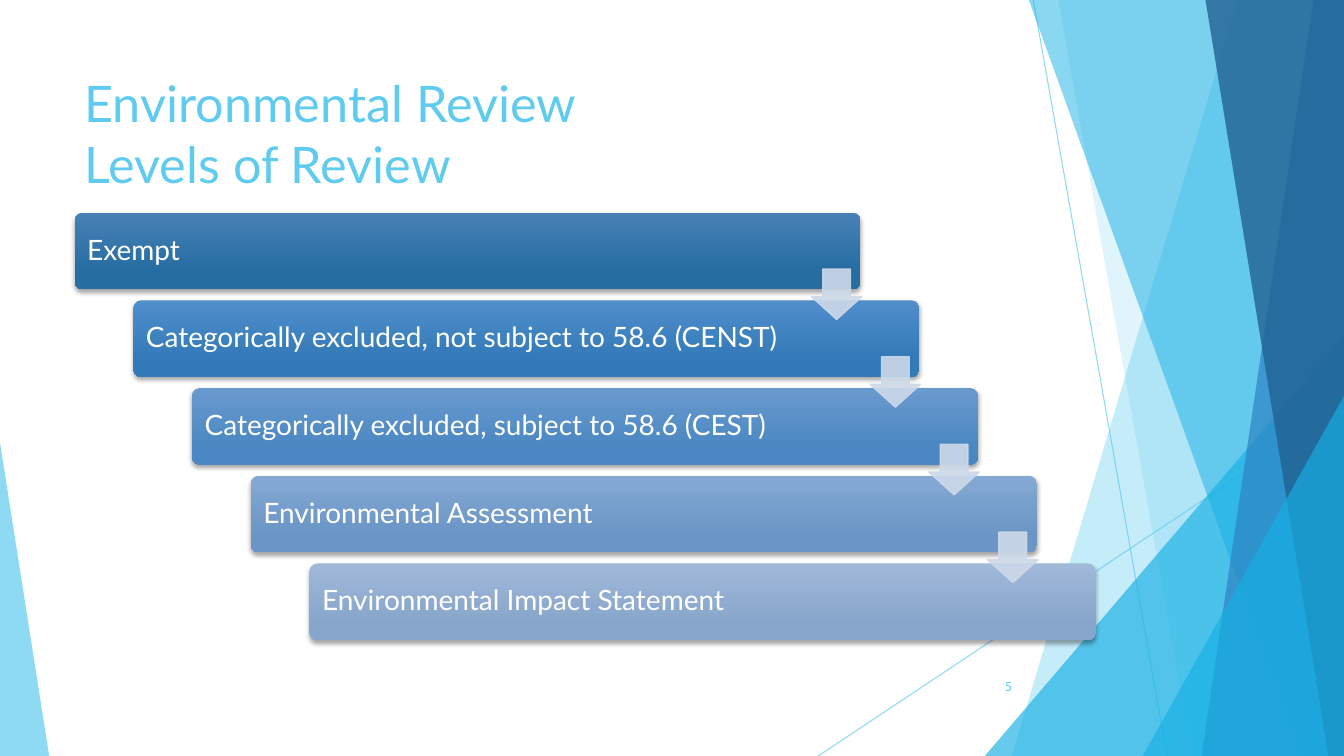
from dataclasses import dataclass

from lxml import etree
from pptx import Presentation
from pptx import util as u
from pptx.dml.color import RGBColor
from pptx.enum import shapes, text
from pptx.oxml.ns import qn


@dataclass(frozen=True)
class Theme:
    font: str = "Lato"
    sky: str = "5FCBEF"
    cyan: str = "17B0E4"
    blue: str = "2E83C3"
    navy: str = "226292"
    arrow: str = "CDD9E9"
    white: str = "FFFFFF"
    shadow: str = "000000"
    title_size: int = 36
    step_size: int = 20
    number_size: int = 9


WIDTH, HEIGHT = 33.87, 19.05
BAR_WIDTH, BAR_HEIGHT, ARROW_SIZE = 19.81, 1.93, 1.27
STEP_X, STEP_Y = 1.48, 2.21
KIND = shapes.MSO_SHAPE


def set_all(target, values):
    for name, value in values.items():
        setattr(target, name, value)


def set_opacity(shape, percent):
    for color in shape._element.spPr.iter(qn("a:srgbClr")):
        etree.SubElement(color, qn("a:alpha"), val=str(percent * 1000))


class SlideBuilder:
    def __init__(self, page, theme):
        self.page = page
        self.theme = theme

    def paint(self, shape, color, opacity, outline=None):
        shape.shadow.inherit = False
        shape.fill.solid()
        shape.fill.fore_color.rgb = RGBColor.from_string(color)
        if outline:
            shape.line.color.rgb = RGBColor.from_string(color)
            shape.line.width = u.Pt(outline)
        else:
            shape.line.fill.background()
        set_opacity(shape, opacity)

    def preset(self, kind, left, top, width, height, adjustments):
        shape = self.page.shapes.add_shape(
            kind, u.Cm(left), u.Cm(top), u.Cm(width), u.Cm(height)
        )
        for index, value in enumerate(adjustments):
            shape.adjustments[index] = value
        return shape

    def line(self, *ends):
        connector = self.page.shapes.add_connector(
            shapes.MSO_CONNECTOR.STRAIGHT, *(u.Cm(end) for end in ends)
        )
        connector.line.color.rgb = RGBColor.from_string(self.theme.sky)
        connector.line.width = u.Pt(0.75)
        etree.SubElement(connector._element.spPr, qn("a:effectLst"))
        set_opacity(connector, 70)

    def facet(self, top_x, bottom_x, color, opacity):
        builder = self.page.shapes.build_freeform(u.Cm(top_x), 0)
        corners = [(WIDTH, 0), (WIDTH, HEIGHT), (bottom_x, HEIGHT)]
        builder.add_line_segments([(u.Cm(x), u.Cm(y)) for x, y in corners])
        self.paint(builder.convert_to_shape(), color, opacity)

    def triangle(self, left, top, width, apex, color, opacity):
        shape = self.preset(
            KIND.ISOSCELES_TRIANGLE, left, top, width, HEIGHT - top, [apex]
        )
        self.paint(shape, color, opacity)

    def fill_text(self, shape, lines, size, color, frame_format, para_format):
        frame = shape.text_frame
        set_all(frame, {"word_wrap": True, **frame_format})
        para = frame.paragraphs[0]
        set_all(para, para_format)
        for index, line in enumerate(lines):
            if index:
                para.add_line_break()
            span = para.add_run()
            span.text = line
            set_all(span.font, {"name": self.theme.font, "size": u.Pt(size)})
            span.font.color.rgb = RGBColor.from_string(color)

    def label(self, left, top, width, height, lines, size, anchor, align):
        box = self.page.shapes.add_textbox(
            u.Cm(left), u.Cm(top), u.Cm(width), u.Cm(height)
        )
        self.fill_text(
            box, lines, size, self.theme.sky,
            {"vertical_anchor": anchor}, {"alignment": align},
        )

    def bar(self, left, top, caption, light, dark):
        shape = self.preset(
            KIND.ROUNDED_RECTANGLE, left, top, BAR_WIDTH, BAR_HEIGHT, [0.1]
        )
        shape.line.fill.background()
        shape.fill.gradient()
        shape.fill.gradient_angle = 270
        for stop, position, color in zip(
            shape.fill.gradient_stops, (0, 0.78), (light, dark)
        ):
            stop.position = position
            stop.color.rgb = RGBColor.from_string(color)
        self.drop_shadow(shape)
        self.fill_text(
            shape, [caption], self.theme.step_size, self.theme.white,
            {
                "vertical_anchor": text.MSO_ANCHOR.MIDDLE,
                "margin_left": u.Cm(0.26),
                "margin_right": u.Cm(0.26),
            },
            {
                "alignment": text.PP_ALIGN.LEFT,
                "line_spacing": 0.9,
                "space_after": u.Pt(7),
            },
        )

    def drop_shadow(self, shape):
        shape.shadow.inherit = False
        effects = shape._element.spPr.find(qn("a:effectLst"))
        shadow = etree.SubElement(
            effects, qn("a:outerShdw"), blurRad=str(u.Pt(3)),
            dist=str(u.Pt(2)), dir="5400000", rotWithShape="0",
        )
        color = etree.SubElement(shadow, qn("a:srgbClr"), val=self.theme.shadow)
        etree.SubElement(color, qn("a:alpha"), val="35000")

    def arrow(self, left, top):
        shape = self.preset(
            KIND.DOWN_ARROW, left, top, ARROW_SIZE, ARROW_SIZE, [0.55, 0.45]
        )
        self.paint(shape, self.theme.arrow, 90, outline=1)


def main():
    theme = Theme()
    deck = Presentation()
    set_all(deck, {"slide_width": u.Cm(WIDTH), "slide_height": u.Cm(HEIGHT)})
    page = deck.slides.add_slide(deck.slide_layouts[6])
    slide = SlideBuilder(page, theme)

    slide.line(26.04, 0, 29.41, HEIGHT)
    slide.line(WIDTH, 10.24, 20.62, HEIGHT)
    slide.facet(31.19, 25.5, theme.sky, 36)
    slide.facet(26.67, 30.05, theme.sky, 20)
    slide.triangle(24.82, 8.46, 9.05, 1, theme.cyan, 66)
    slide.facet(25.93, 32.79, theme.cyan, 50)
    slide.facet(33.1, 30.28, theme.blue, 70)
    slide.facet(30.38, 33.48, theme.navy, 80)
    slide.triangle(28.8, 9.98, 5.07, 1, theme.cyan, 66)
    slide.triangle(0, 11.15, 1.24, 0, theme.sky, 70)

    slide.label(
        1.88, 1.7, 23.88, 3.66, ["Environmental Review", "Levels of Review"],
        theme.title_size, text.MSO_ANCHOR.TOP, text.PP_ALIGN.LEFT,
    )
    slide.label(
        23.85, 16.79, 1.91, 1.02, ["5"],
        theme.number_size, text.MSO_ANCHOR.MIDDLE, text.PP_ALIGN.RIGHT,
    )

    levels = [
        ("Exempt", "4880B5", "266DA2"),
        ("Categorically excluded, not subject to 58.6 (CENST)", "508DCB", "337AB8"),
        ("Categorically excluded, subject to 58.6 (CEST)", "699ACE", "4B87C2"),
        ("Environmental Assessment", "84A9D3", "6A95C6"),
        ("Environmental Impact Statement", "A0B9D9", "88A5CB"),
    ]
    for index, level in enumerate(levels):
        slide.bar(1.88 + index * STEP_X, 5.36 + index * STEP_Y, *level)
    for index in range(len(levels) - 1):
        slide.arrow(20.45 + index * STEP_X, 6.78 + index * STEP_Y)

    deck.save("out.pptx")


if __name__ == "__main__":
    main()
